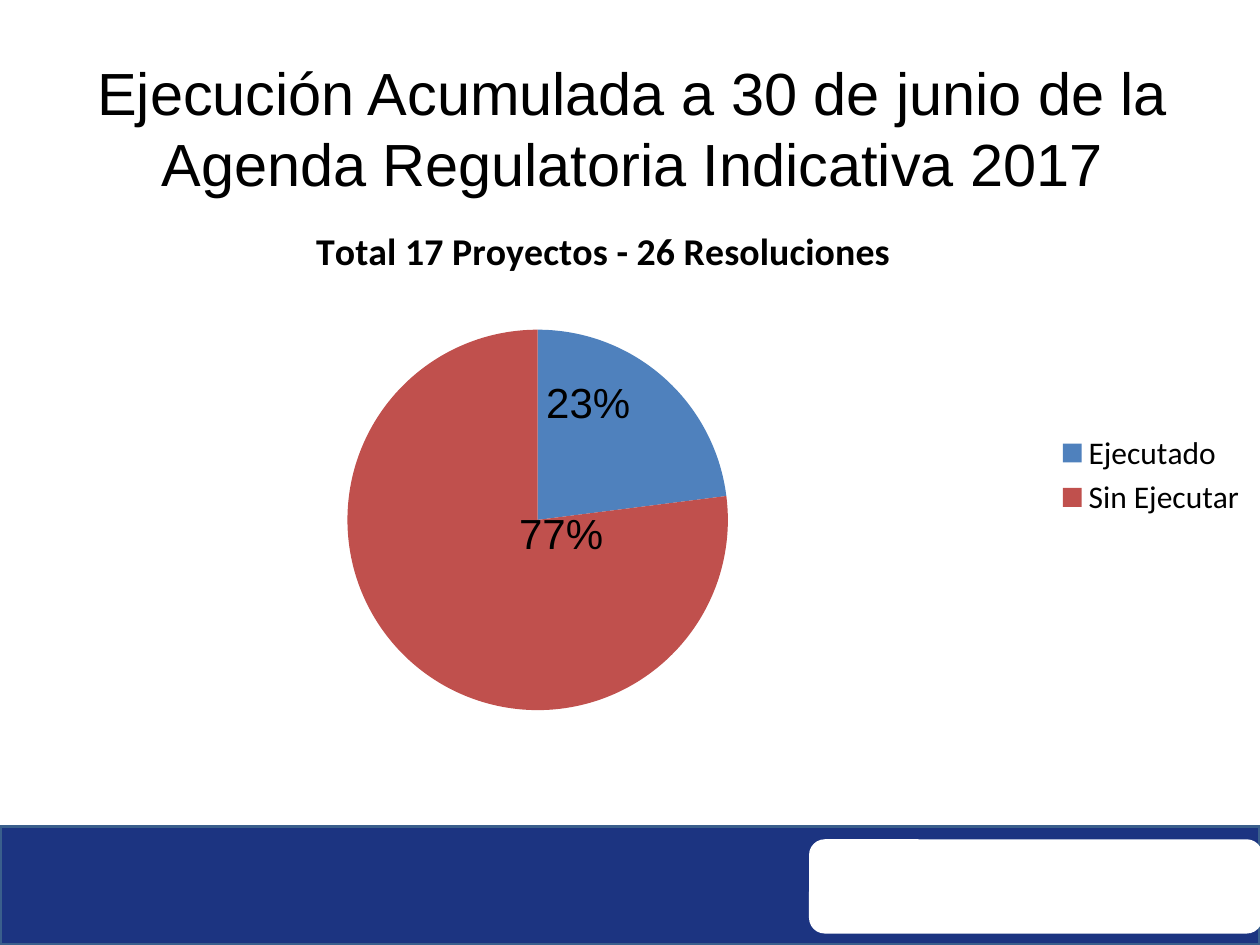
from lxml import etree
from pptx import Presentation
from pptx.chart.data import CategoryChartData
from pptx.dml.color import RGBColor
from pptx.enum.chart import XL_CHART_TYPE, XL_LABEL_POSITION, XL_LEGEND_POSITION
from pptx.enum.shapes import MSO_SHAPE
from pptx.enum.text import MSO_ANCHOR, MSO_AUTO_SIZE, PP_ALIGN
from pptx.oxml import parse_xml
from pptx.oxml.ns import nsdecls, qn
from pptx.util import Cm, Pt

PIE = XL_CHART_TYPE.PIE
CENTER_LABEL = XL_LABEL_POSITION.CENTER
RIGHT = XL_LEGEND_POSITION.RIGHT

COLORS = {"black": "000000", "white": "FFFFFF", "navy": "1C3481",
          "edge": "3A5F8C", "blue": "4F81BD", "red": "C0504D"}

TITLE = "Ejecución Acumulada a 30 de junio de la Agenda Regulatoria Indicativa 2017"
CHART_TITLE = "Total 17 Proyectos - 26 Resoluciones"
SLICES = [
    ("Ejecutado", 0.23, "blue", {"x": -0.01, "y": -0.08}),
    ("Sin Ejecutar", 0.77, "red", {"x": 0.07, "y": -0.1}),
]
FOOTER = [
    (MSO_SHAPE.RECTANGLE, (0, 16.66, 25.4, 2.39), "navy", "edge"),
    (MSO_SHAPE.ROUNDED_RECTANGLE, (16.31, 16.92, 9.14, 1.9), "white", None),
]
TITLE_BOX = (0.1, 0.97, 25.3, 3.18)
CHART_BOX = (0.51, 3.94, 24.89, 11.28)
PLOT = {"layoutTarget": "inner", "xMode": "edge", "yMode": "edge",
        "x": 0.26, "y": 0.24, "w": 0.31, "h": 0.68}
TITLE_PLACE = {"xMode": "edge", "yMode": "edge", "x": 0.23, "y": 0.04}

FORMATS = {
    "title": {"name": "Arial", "size": Pt(34)},
    "chart": {"name": "Calibri", "size": Pt(18)},
    "chart_title": {"name": "Calibri", "size": Pt(21.6), "bold": True},
    "label": {"name": "Arial", "size": Pt(24)},
}


def rgb(name):
    return RGBColor.from_string(COLORS[name])


def box(lengths):
    return [Cm(v) for v in lengths]


def style(font, name):
    for key, value in FORMATS[name].items():
        setattr(font, key, value)
    font.color.rgb = rgb("black")


def place(parent, index, values):
    for old in parent.findall(qn("c:layout")):
        parent.remove(old)
    layout = parse_xml(f"<c:layout {nsdecls('c')}><c:manualLayout/></c:layout>")
    for key, value in values.items():
        etree.SubElement(layout[0], qn(f"c:{key}")).set("val", str(value))
    parent.insert(index, layout)


def add_footer(s):
    for kind, lengths, fill, line in FOOTER:
        shape = s.shapes.add_shape(kind, *box(lengths))
        shape.shadow.inherit = False
        shape.fill.solid()
        shape.fill.fore_color.rgb = rgb(fill)
        if line:
            shape.line.color.rgb = rgb(line)
            shape.line.width = Pt(2)
        else:
            shape.line.fill.background()


def add_title(s):
    tf = s.shapes.add_textbox(*box(TITLE_BOX)).text_frame
    tf.word_wrap = True
    tf.auto_size = MSO_AUTO_SIZE.SHAPE_TO_FIT_TEXT
    tf.vertical_anchor = MSO_ANCHOR.MIDDLE
    p = tf.paragraphs[0]
    p.alignment = PP_ALIGN.CENTER
    r = p.add_run()
    r.text = TITLE
    style(r.font, "title")
    shadow = parse_xml(
        f'<a:effectLst {nsdecls("a")}><a:outerShdw blurRad="38100" dist="38100" '
        'dir="2700000" algn="tl"><a:srgbClr val="000000"><a:alpha val="43000"/>'
        '</a:srgbClr></a:outerShdw></a:effectLst>')
    r.font.fill._xPr.insert(1, shadow)


def add_pie(s):
    data = CategoryChartData(number_format="0%")
    data.categories = [name for name, *_ in SLICES]
    data.add_series(CHART_TITLE, [value for _, value, *_ in SLICES])
    chart = s.shapes.add_chart(PIE, *box(CHART_BOX), data).chart
    style(chart.font, "chart")

    chart.has_title = True
    p = chart.chart_title.text_frame.paragraphs[0]
    r = p.add_run()
    r.text = CHART_TITLE
    style(r.font, "chart_title")
    place(chart.chart_title._element, 1, TITLE_PLACE)

    chart.has_legend = True
    chart.legend.position = RIGHT
    chart.legend.include_in_layout = False

    plot = chart.plots[0]
    plot.vary_by_categories = True
    place(chart._chartSpace.chart.plotArea, 0, PLOT)
    series = plot.series[0]
    labels = series.data_labels
    labels.show_value = True
    labels.number_format = "0%"
    labels.number_format_is_linked = False
    style(labels.font, "label")
    for i, (_, _, color, offset) in enumerate(SLICES):
        point = series.points[i]
        point.format.fill.solid()
        point.format.fill.fore_color.rgb = rgb(color)
        point.format.line.fill.background()
        label = point.data_label
        style(label.font, "label")
        label.position = CENTER_LABEL
        place(labels._element.findall(qn("c:dLbl"))[i], 1, offset)


def main():
    prs = Presentation()
    prs.slide_width, prs.slide_height = Cm(25.4), Cm(19.05)
    s = prs.slides.add_slide(prs.slide_layouts[6])
    add_footer(s)
    add_title(s)
    add_pie(s)
    prs.save("out.pptx")


if __name__ == "__main__":
    main()
